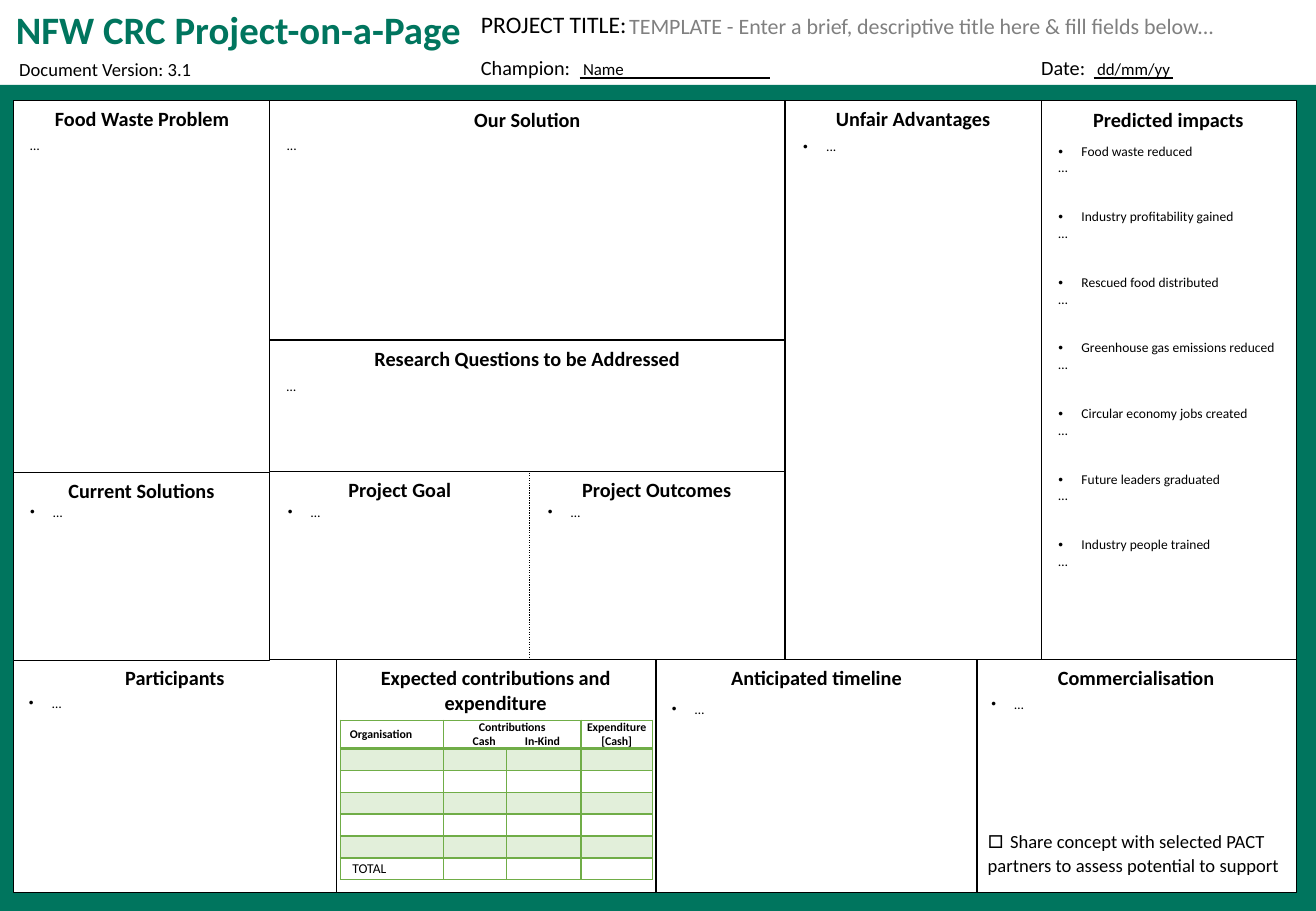
from pptx import Presentation
from pptx.dml.color import RGBColor
from pptx.enum.dml import MSO_LINE
from pptx.enum.shapes import MSO_CONNECTOR, MSO_SHAPE
from pptx.enum.text import MSO_ANCHOR, MSO_AUTO_SIZE, PP_ALIGN
from pptx.oxml.ns import qn
from pptx.util import Pt
from lxml.etree import SubElement

PX = 9144  # 100 px to the inch
NO_STYLE = "{2D5ABB26-0587-4C30-8999-92F81FD0307C}"
GREEN, LEAF, PALE = "00755E", "70AD47", "E2EFDA"
BLACK, WHITE, GREY = "000000", "FFFFFF", "808080"


def px(n):
    return int(n * PX)


def rgb(color):
    return RGBColor.from_string(color)


class Deck:
    font = "Calibri"

    def __init__(self, w, h):
        self.prs = Presentation()
        self.prs.slide_width, self.prs.slide_height = px(w), px(h)
        self.s = self.prs.slides.add_slide(self.prs.slide_layouts[5])

    def style(self, p, size, color=BLACK, bold=False, align=PP_ALIGN.LEFT):
        p.alignment = align
        for r in p.runs:
            r.font.name, r.font.size, r.font.bold = self.font, Pt(size), bold
            r.font.color.rgb = rgb(color)

    def bullet(self, p):
        pPr = p._p.get_or_add_pPr()
        pPr.set("marL", str(px(19)))
        pPr.set("indent", str(px(-19)))
        SubElement(pPr, qn("a:buFont")).set("typeface", "Arial")
        SubElement(pPr, qn("a:buChar")).set("char", "•")

    def title(self, text, box, size, color):
        sp = self.s.shapes.title
        sp.left, sp.top, sp.width, sp.height = map(px, box)
        tf = sp.text_frame
        tf.text = text
        tf.auto_size, tf.vertical_anchor = MSO_AUTO_SIZE.NONE, MSO_ANCHOR.TOP
        self.style(tf.paragraphs[0], size, color, True)

    def text(self, text, box, size, color=BLACK, bullet=False, wrap=True):
        tf = self.s.shapes.add_textbox(*map(px, box)).text_frame
        tf.word_wrap = wrap
        tf.text = text
        p = tf.paragraphs[0]
        if bullet:
            self.bullet(p)
        self.style(p, size, color)
        return p

    def rect(self, box, fill, line=None, dash=None):
        sp = self.s.shapes.add_shape(MSO_SHAPE.RECTANGLE, *map(px, box))
        sp.shadow.inherit = False
        sp.fill.solid()
        sp.fill.fore_color.rgb = rgb(fill)
        if line:
            sp.line.color.rgb, sp.line.width = rgb(line), Pt(0.75)
            sp.line.dash_style = dash
        else:
            sp.line.fill.background()
        return sp

    def panel(self, heading, box, dash=None):
        tf = self.rect(box, WHITE, BLACK, dash).text_frame
        tf.word_wrap, tf.vertical_anchor = True, MSO_ANCHOR.TOP
        tf.text = heading
        self.style(tf.paragraphs[0], 12, bold=True, align=PP_ALIGN.CENTER)

    def rule(self, x1, x2, y):
        c = self.s.shapes.add_connector(MSO_CONNECTOR.STRAIGHT, px(x1), px(y), px(x2), px(y))
        c.line.color.rgb, c.line.width = rgb(BLACK), Pt(1)
        SubElement(c._element.spPr, qn("a:effectLst"))

    def table(self, left, top, cols, rows):
        box = (left, top, sum(cols), sum(rows))
        t = self.s.shapes.add_table(len(rows), len(cols), *map(px, box)).table
        t.first_row = t.horz_banding = False
        t._tbl.tblPr[0].text = NO_STYLE
        for col, w in zip(t.columns, cols):
            col.width = px(w)
        for row, h in zip(t.rows, rows):
            row.height = px(h)
        for cell in t.iter_cells():
            cell.fill.background()
            cell.margin_left = cell.margin_right = cell.margin_top = cell.margin_bottom = 0
            end = SubElement(cell.text_frame.paragraphs[0]._p, qn("a:endParaRPr"))
            end.set("sz", "800")
        return t

    def borders(self, cell, color, bottom=1):
        tcPr = cell._tc.get_or_add_tcPr()
        for i, (side, w) in enumerate(zip("LRTB", (1, 1, 1, bottom))):
            ln = tcPr.makeelement(qn("a:ln" + side), {"w": str(Pt(w))})
            SubElement(SubElement(ln, qn("a:solidFill")), qn("a:srgbClr")).set("val", color)
            tcPr.insert(i, ln)


# Heading, panel box, body text, body box, bulleted, dash
DOT = MSO_LINE.ROUND_DOT
PANELS = [
    ("Food Waste Problem", (11, 83, 212, 306), "…", (15, 108, 205, 275), False, None),
    ("Predicted impacts", (856, 83, 211, 461), None, None, False, None),
    ("Commercialisation", (803, 543, 264, 192), "…", (806, 568, 255, 108), True, None),
    ("Our Solution", (222, 83, 424, 199), "...", (226, 108, 420, 165), False, None),
    ("Project Outcomes", (435, 388, 211, 155), "…", (441, 410, 199, 125), True, DOT),
    ("Project Goal", (222, 388, 214, 155), "…", (227, 410, 204, 125), True, DOT),
    ("Anticipated timeline", (540, 543, 264, 192), "…", (543, 572, 259, 157), True, None),
    ("Expected contributions and expenditure", (276, 543, 264, 192), None, None, False, None),
    ("Participants", (11, 543, 266, 192), "…", (14, 567, 259, 165), True, None),
    ("Current Solutions", (11, 389, 211, 155), "…", (15, 410, 204, 124), True, None),
    ("Unfair Advantages", (646, 83, 211, 460), "...", (651, 109, 199, 416), True, None),
    ("Research Questions to be Addressed", (222, 280, 424, 108), "…", (226, 306, 414, 78),
     False, None),
]
IMPACTS = ["Food waste reduced", "Industry profitability gained", "Rescued food distributed",
           "Greenhouse gas emissions reduced", "Circular economy jobs created",
           "Future leaders graduated", "Industry people trained"]


def main():
    d = Deck(1083, 750)

    # Header
    d.title("NFW CRC Project-on-a-Page", (3, 0, 409, 50), 23, GREEN)
    d.rect((0, 70, 1083, 680), GREEN)
    for text, box, size, color in [
        ("PROJECT TITLE:", (386, 3, 141, 34), 14, BLACK),
        ("TEMPLATE - Enter a brief, descriptive title here & fill fields below...",
         (508, 5, 504, 32), 13, GREY),
        ("Document Version: 3.1", (6, 43, 278, 29), 11, BLACK),
        ("Champion:", (386, 41, 97, 30), 12, BLACK),
        ("Name", (470, 43, 121, 27), 10, BLACK),
        ("Date:", (847, 41, 59, 30), 12, BLACK),
        ("dd/mm/yy", (893, 43, 102, 27), 10, BLACK),
    ]:
        d.text(text, box, size, color, wrap=False)
    d.rule(477, 634, 64)
    d.rule(900, 965, 64)

    # Canvas panels and their bodies
    for heading, box, _, _, _, dash in PANELS:
        d.panel(heading, box, dash)
    for _, _, body, box, bulleted, _ in PANELS:
        if body:
            d.text(body, box, 8, bullet=bulleted)

    # Tick box under Commercialisation
    p = d.text("□ ", (803, 680, 264, 50), 16)
    p.add_run().text = "Share concept with selected PACT partners to assess potential to support"
    d.style(p, 11)
    p.runs[0].font.size = Pt(16)
    p.line_spacing = Pt(13)

    # Predicted impacts
    t = d.table(861, 118, [10, 195], [54] * len(IMPACTS))
    for i, impact in enumerate(IMPACTS):
        tf = t.cell(i, 1).text_frame
        tf.text = impact + "\n…"
        d.bullet(tf.paragraphs[0])
        for p in tf.paragraphs:
            d.style(p, 8)

    # Contributions and expenditure
    t = d.table(280, 593, [85, 52, 61, 59], [22] + [18] * 6)
    for i, row in enumerate(t.rows):
        for cell in row.cells:
            if i % 2:
                cell.fill.solid()
                cell.fill.fore_color.rgb = rgb(PALE)
            d.borders(cell, LEAF, 1 if i else 2)
    t.cell(0, 1).merge(t.cell(0, 2))
    for row, col, text, size, margin, align in [
        (0, 0, "Organisation", 7, 8, PP_ALIGN.LEFT),
        (0, 1, "Contributions\n\tCash\tIn-Kind", 7, 10, PP_ALIGN.CENTER),
        (0, 3, "Expenditure\n[Cash]", 7, 4, PP_ALIGN.CENTER),
        (6, 0, "TOTAL", 8, 10, PP_ALIGN.LEFT),
    ]:
        cell = t.cell(row, col)
        cell.margin_left = cell.margin_right = px(margin)
        cell.vertical_anchor = MSO_ANCHOR.MIDDLE
        cell.text_frame.text = text
        for p in cell.text_frame.paragraphs:
            d.style(p, size, bold=row == 0, align=align)
    p = t.cell(0, 1).text_frame.paragraphs[1]
    p.alignment = PP_ALIGN.LEFT
    tabs = SubElement(p._p.get_or_add_pPr(), qn("a:tabLst"))
    for pos in (14, 57):
        tab = SubElement(tabs, qn("a:tab"))
        tab.set("pos", str(px(pos)))
        tab.set("algn", "l")

    d.prs.save("out.pptx")


if __name__ == "__main__":
    main()
